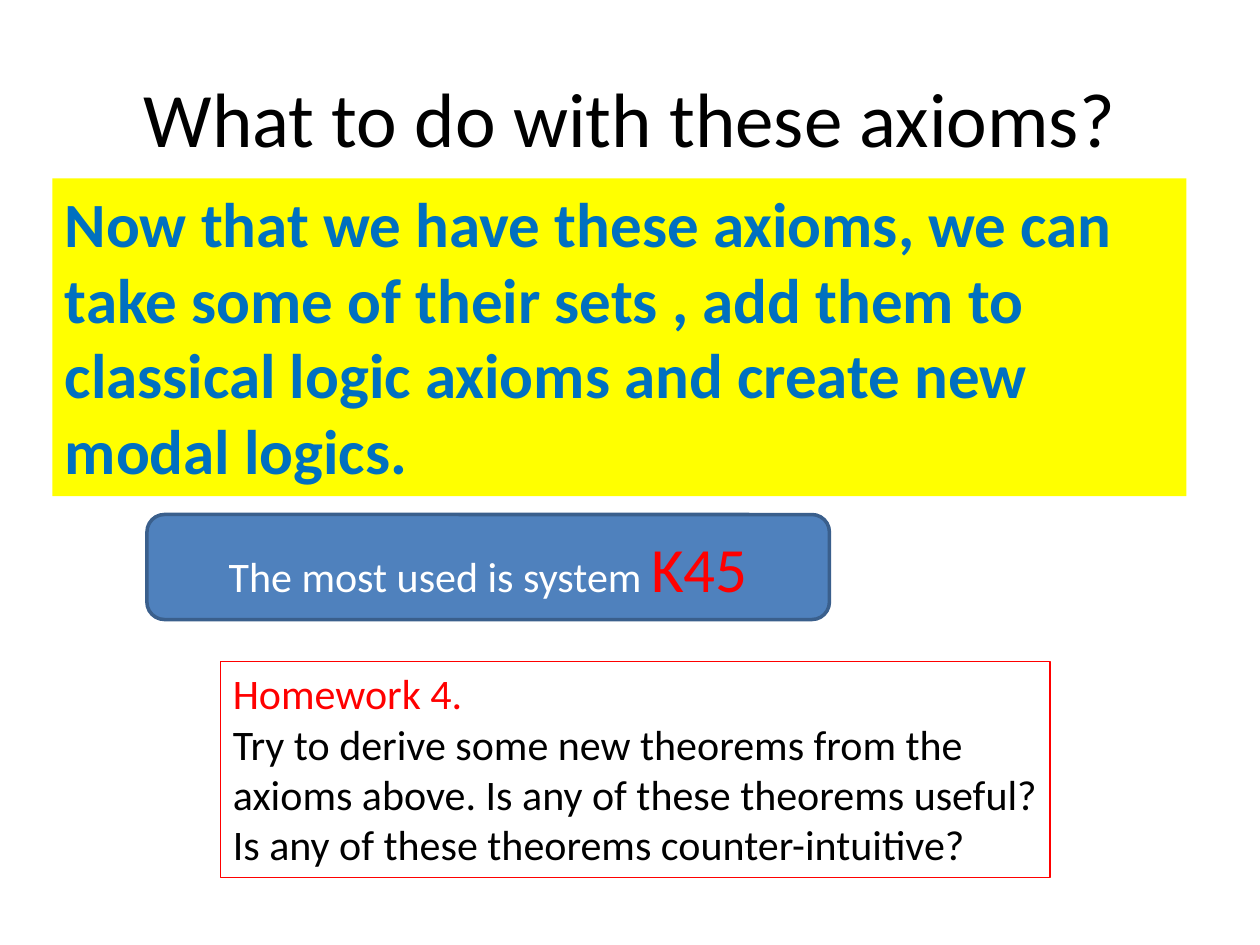
from dataclasses import dataclass
from typing import Optional

from pptx import Presentation
from pptx.dml.color import RGBColor
from pptx.enum.shapes import MSO_SHAPE
from pptx.enum.text import MSO_ANCHOR, PP_ALIGN
from pptx.util import Inches, Pt

RECTANGLE, ROUNDED = MSO_SHAPE.RECTANGLE, MSO_SHAPE.ROUNDED_RECTANGLE
TOP, MIDDLE = MSO_ANCHOR.TOP, MSO_ANCHOR.MIDDLE
LEFT, CENTER = PP_ALIGN.LEFT, PP_ALIGN.CENTER
WIDTH, HEIGHT = Inches(10), Inches(7.5)
COLUMNS, ROWS = 120, 90


@dataclass(frozen=True)
class Theme:
    font: str = "Calibri"
    title_size: int = 44
    large_size: int = 36
    body_size: int = 24
    black: str = "000000"
    white: str = "FFFFFF"
    red: str = "FF0000"
    blue: str = "0070C0"
    yellow: str = "FFFF00"
    panel: str = "4F81BD"
    panel_edge: str = "3A5F8C"


THEME = Theme()


@dataclass(frozen=True)
class Span:
    text: str
    size: int = THEME.body_size
    color: str = THEME.black
    bold: bool = False


@dataclass(frozen=True)
class Box:
    column: float
    row: float
    columns: float
    rows: float
    paragraphs: tuple[tuple[Span, ...], ...]
    geometry: MSO_SHAPE = RECTANGLE
    fill: Optional[str] = None
    edge: Optional[str] = None
    edge_width: float = 0.75
    anchor: MSO_ANCHOR = TOP
    alignment: PP_ALIGN = LEFT


BOXES = (
    Box(6, 3.6, 108, 15,
        ((Span("What to do with these axioms?", THEME.title_size),),),
        anchor=MIDDLE, alignment=CENTER),
    Box(5, 17, 108, 30.25,
        ((Span("Now that we have these axioms, we can take some of their sets , "
               "add them to classical logic axioms and create new modal logics.",
               THEME.large_size, THEME.blue, True),),),
        fill=THEME.yellow),
    Box(14, 49, 65, 10,
        ((Span("The most used is system ", color=THEME.white),
          Span("K45", THEME.large_size, THEME.red)),),
        ROUNDED, THEME.panel, THEME.panel_edge, 2, MIDDLE, CENTER),
    Box(21, 63, 79, 20.6,
        ((Span("Homework 4.", color=THEME.red),),
         (Span("Try to derive some new theorems from the axioms above. "
               "Is any of these theorems useful?"),),
         (Span("Is any of these theorems counter-intuitive?"),)),
        edge=THEME.red),
)


def write_paragraph(paragraph, spans: tuple[Span, ...], alignment: PP_ALIGN) -> None:
    """Write styled spans into one paragraph."""
    paragraph.alignment = alignment
    paragraph.font.name = THEME.font
    for span in spans:
        run = paragraph.add_run()
        run.text = span.text
        run.font.name = THEME.font
        run.font.size = Pt(span.size)
        run.font.bold = span.bold
        run.font.color.rgb = RGBColor.from_string(span.color)


def draw_box(slide, box: Box) -> None:
    """Draw a box with its fill, edge and text."""
    shape = slide.shapes.add_shape(
        box.geometry,
        round(WIDTH * box.column / COLUMNS), round(HEIGHT * box.row / ROWS),
        round(WIDTH * box.columns / COLUMNS), round(HEIGHT * box.rows / ROWS))
    shape.shadow.inherit = False
    if box.fill:
        shape.fill.solid()
        shape.fill.fore_color.rgb = RGBColor.from_string(box.fill)
    else:
        shape.fill.background()
    if box.edge:
        shape.line.color.rgb = RGBColor.from_string(box.edge)
        shape.line.width = Pt(box.edge_width)
    else:
        shape.line.fill.background()
    frame = shape.text_frame
    frame.word_wrap = True
    frame.vertical_anchor = box.anchor
    for index, spans in enumerate(box.paragraphs):
        paragraph = frame.add_paragraph() if index else frame.paragraphs[0]
        write_paragraph(paragraph, spans, box.alignment)


def main() -> None:
    """Build and save the slide."""
    presentation = Presentation()
    presentation.slide_width, presentation.slide_height = WIDTH, HEIGHT
    slide = presentation.slides.add_slide(presentation.slide_layouts[6])
    for box in BOXES:
        draw_box(slide, box)
    presentation.save("out.pptx")


if __name__ == "__main__":
    main()
